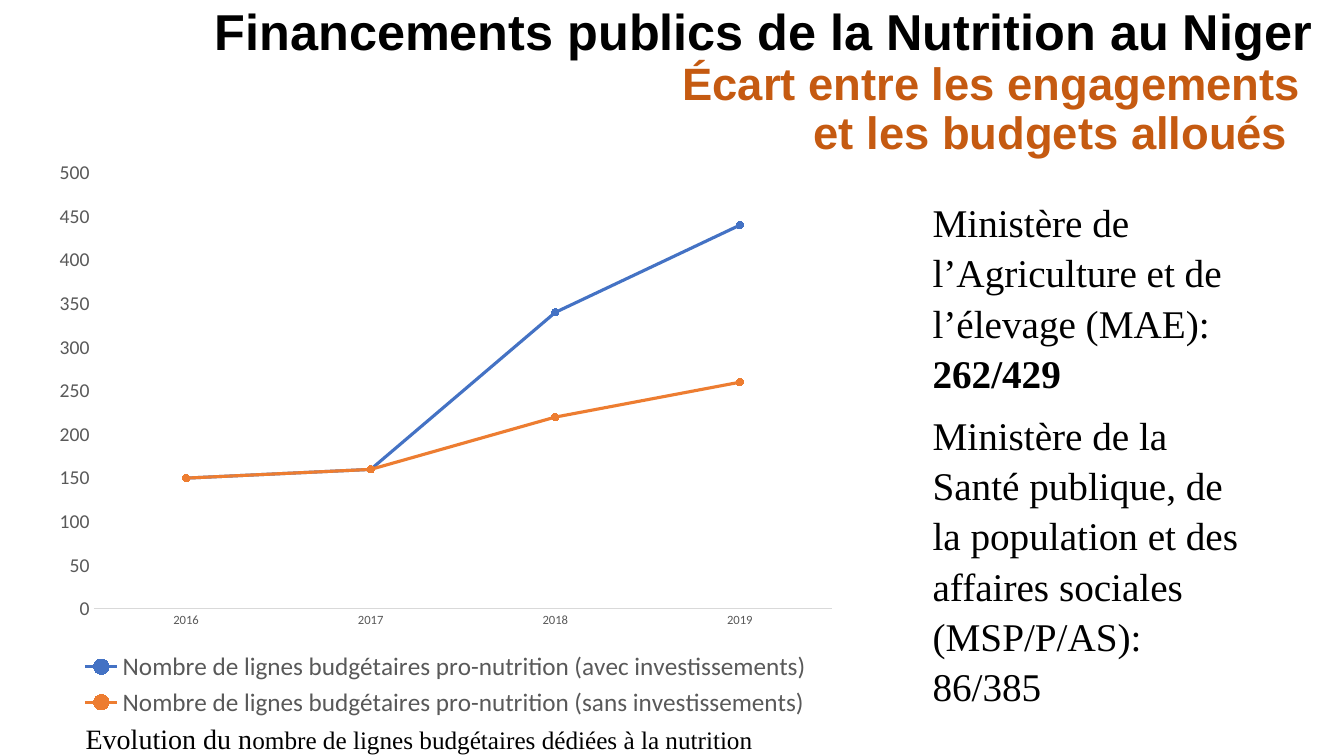
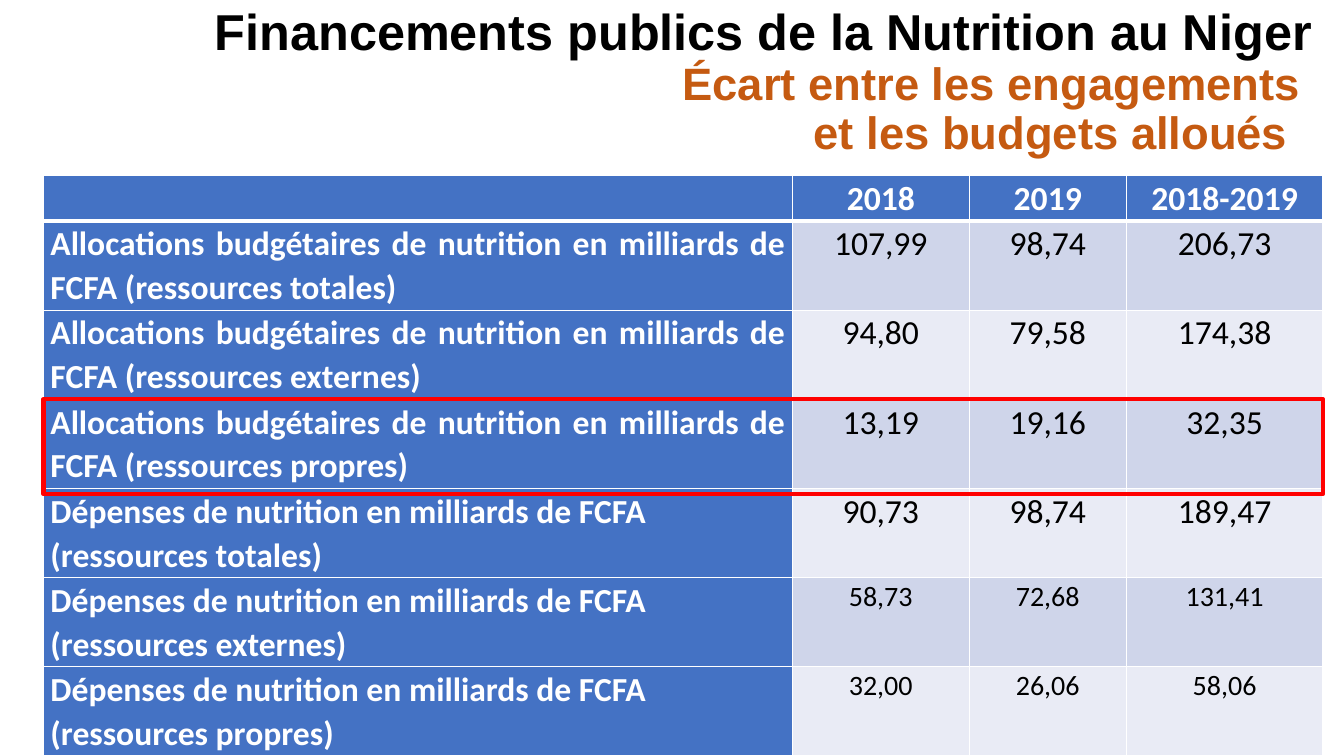
import pptx
import pptx.chart.data
import pptx.dml.color
import pptx.enum.chart
import pptx.enum.shapes
import pptx.enum.text
import pptx.oxml
import pptx.oxml.ns
import pptx.util

WIDE, HIGH = 13.33, 7.5
HEAD = (3.22, 0.93, 95.2, 19)
PLOT = (3.23, 19.76, 95.2, 80.24)
GRID = (3.23, 23.24, 95.2, 76.76)
BLACK, WHITE, BLUE, ORANGE = "000000", "FFFFFF", "4472C4", "ED7D31"
RUST, GREY, PALE, RED = "C55A11", "595959", "D9D9D9", "FF0000"
BANDS = ("CFD5EA", "E9EBF5")
SERIF = "Times New Roman"
ALIGN = pptx.enum.text.PP_ALIGN

TITLE = [
    [("Financements publics de la Nutrition au Niger", {"size": 36, "color": BLACK})],
    [("Écart entre les engagements ", {})],
    [("et les budgets alloués  ", {})],
]
NOTES = [
    [("Ministère de l’Agriculture et de l’élevage (MAE): ", {}), ("262/429", {"bold": True})],
    [("Ministère de la Santé publique, de la population et des affaires sociales "
      "(MSP/P/AS): 86/385", {})],
]
LABEL = [[("Evolution du n", {"size": 20}),
          ("ombre de lignes budgétaires dédiées à la nutrition", {})]]
YEARS = ("2016", "2017", "2018", "2019")
LINES = [("avec", BLUE, (150, 160, 340, 440)), ("sans", ORANGE, (150, 160, 220, 260))]
NAMES = ("Allocations budgétaires de nutrition", "Dépenses de nutrition")
KINDS = ("totales", "externes", "propres")
TOPS = ("", "2018", "2019", "2018-2019")
SUMS = [
    ("107,99", "98,74", "206,73"),
    ("94,80", "79,58", "174,38"),
    ("13,19", "19,16", "32,35"),
    ("90,73", "98,74", "189,47"),
    ("58,73", "72,68", "131,41"),
    ("32,00", "26,06", "58,06"),
]


def tint(code):
    """Turn a hex string into a colour."""
    return pptx.dml.color.RGBColor.from_string(code)


def inner(box, x, y, w, h):
    """Return the part of a box given by percentages of its size."""
    left, top, wide, high = box
    return (left + wide * x / 100, top + high * y / 100, wide * w / 100, high * h / 100)


def place(box):
    """Turn slide percentages into lengths."""
    sides = (WIDE, HIGH, WIDE, HIGH)
    return [pptx.util.Inches(part * side / 100) for part, side in zip(box, sides)]


def style(font, size, color, face="Calibri", bold=False):
    """Set the looks of a font."""
    font.size, font.name, font.bold = pptx.util.Pt(size), face, bold
    font.color.rgb = tint(color)


def write(frame, paras, align=ALIGN.LEFT, space=1, after=0, **look):
    """Fill a text frame with paragraphs of runs."""
    frame.word_wrap = True
    for i, runs in enumerate(paras):
        para = frame.add_paragraph() if i else frame.paragraphs[0]
        para.alignment, para.line_spacing = align, space
        para.space_after = pptx.util.Pt(after)
        for text, extra in runs:
            run = para.add_run()
            run.text = text
            style(run.font, **{**look, **extra})


def note(slide, box, paras, **look):
    """Add a text box."""
    frame = slide.shapes.add_textbox(*place(box)).text_frame
    write(frame, paras, **look)
    return frame


def title(slide, box):
    """Add the shared heading."""
    frame = note(slide, box, TITLE, align=ALIGN.RIGHT, space=0.9,
                 size=32.4, color=RUST, face="Arial", bold=True)
    frame.margin_top = frame.margin_bottom = 0


def graph(slide, box):
    """Add the line chart of budget lines."""
    kinds = pptx.enum.chart
    data = pptx.chart.data.CategoryChartData()
    data.categories = YEARS
    for word, _, vals in LINES:
        data.add_series(f"Nombre de lignes budgétaires pro-nutrition ({word} investissements)", vals)
    chart = slide.shapes.add_chart(kinds.XL_CHART_TYPE.LINE_MARKERS, *place(box), data).chart
    style(chart.font, 10, BLACK)
    chart.has_title = False
    chart.has_legend = True
    chart.legend.position = kinds.XL_LEGEND_POSITION.BOTTOM
    chart.legend.include_in_layout = False
    style(chart.legend.font, 18, GREY)
    for axis, size in ((chart.category_axis, 9), (chart.value_axis, 14)):
        axis.has_major_gridlines = False
        axis.major_tick_mark = axis.minor_tick_mark = kinds.XL_TICK_MARK.NONE
        style(axis.tick_labels.font, size, GREY)
    rule = chart.category_axis.format.line
    rule.color.rgb, rule.width = tint(PALE), pptx.util.Pt(0.75)
    scale = chart.value_axis
    scale.format.line.fill.background()
    scale.minimum_scale, scale.maximum_scale, scale.major_unit = 0, 500, 50
    chart.plots[0].vary_by_categories = False
    for line, (_, code, _) in zip(chart.plots[0].series, LINES):
        line.smooth = False
        line.format.line.color.rgb = tint(code)
        line.format.line.width = pptx.util.Pt(2.25)
        mark = line.marker
        mark.style, mark.size = kinds.XL_MARKER_STYLE.CIRCLE, 5
        mark.format.fill.solid()
        mark.format.fill.fore_color.rgb = tint(code)
        mark.format.line.color.rgb = tint(code)


def edge(cell, **widths):
    """Draw white cell borders, one point wide unless given."""
    props = cell._tc.get_or_add_tcPr()
    for i, side in enumerate("LRTB"):
        size = pptx.util.Pt(widths.get(side, 1))
        props.insert(i, pptx.oxml.parse_xml(
            f'<a:ln{side} {pptx.oxml.ns.nsdecls("a")} w="{size}"><a:solidFill>'
            f'<a:srgbClr val="{WHITE}"/></a:solidFill></a:ln{side}>'))


def fill(cell, text, back, align, **look):
    """Set the text and fill of a table cell."""
    cell.fill.solid()
    cell.fill.fore_color.rgb = tint(back)
    cell.margin_left = cell.margin_right = pptx.util.Inches(0.07)
    cell.margin_top = cell.margin_bottom = 0
    if text:
        write(cell.text_frame, [[(text, {})]], align, 1.07, 8, **look)


def table(slide, box, cols=(58.55, 13.8, 12.3, 15.35), top=7.8):
    """Add the budget table and frame its own-resources row."""
    step = (100 - top) / len(SUMS)
    grid = slide.shapes.add_table(len(SUMS) + 1, len(cols), *place(box)).table
    for col, share in zip(grid.columns, cols):
        col.width = place(inner(box, 0, 0, share, 0))[2]
    for i, row in enumerate(grid.rows):
        row.height = place(inner(box, 0, 0, 0, step if i else top))[3]
    for j, text in enumerate(TOPS):
        cell = grid.cell(0, j)
        fill(cell, text, BLUE, ALIGN.CENTER, size=24, color=WHITE, bold=True)
        edge(cell, B=3)
    for i, vals in enumerate(SUMS):
        group, kind = divmod(i, len(KINDS))
        name = f"{NAMES[group]} en milliards de FCFA (ressources {KINDS[kind]})"
        for j, text in enumerate((name, *vals)):
            cell = grid.cell(i + 1, j)
            if j:
                fill(cell, text, BANDS[i % 2], ALIGN.CENTER, size=24 if i < 4 else 20, color=BLACK)
            else:
                fill(cell, text, BLUE, ALIGN.LEFT if group else ALIGN.JUSTIFY,
                     size=24, color=WHITE, bold=True)
            edge(cell, T=1 if i else 3)
    spot = inner(box, 0, top + 2 * step, 100, step + 1)
    ring = slide.shapes.add_shape(pptx.enum.shapes.MSO_SHAPE.RECTANGLE, *place(spot))
    ring.shadow.inherit = False
    ring.fill.background()
    ring.line.color.rgb, ring.line.width = tint(RED), pptx.util.Pt(3)


def trend(slide, box):
    """Add the chart, its caption and the ministry notes."""
    graph(slide, inner(box, 0, 0, 62.9, 94.5))
    note(slide, inner(box, 2.52, 93.5, 69, 6.5), LABEL, size=18, color=BLACK, face=SERIF)
    note(slide, inner(box, 68.72, 6.7, 27.03, 86.9), NOTES, space=1.07, after=8,
         size=28, color=BLACK, face=SERIF)


def main():
    """Build and save the deck."""
    deck = pptx.Presentation()
    deck.slide_width, deck.slide_height = pptx.util.Inches(WIDE), pptx.util.Inches(HIGH)
    for body, box in ((trend, PLOT), (table, GRID)):
        slide = deck.slides.add_slide(deck.slide_layouts[6])
        title(slide, HEAD)
        body(slide, box)
    deck.save("out.pptx")


if __name__ == "__main__":
    main()
